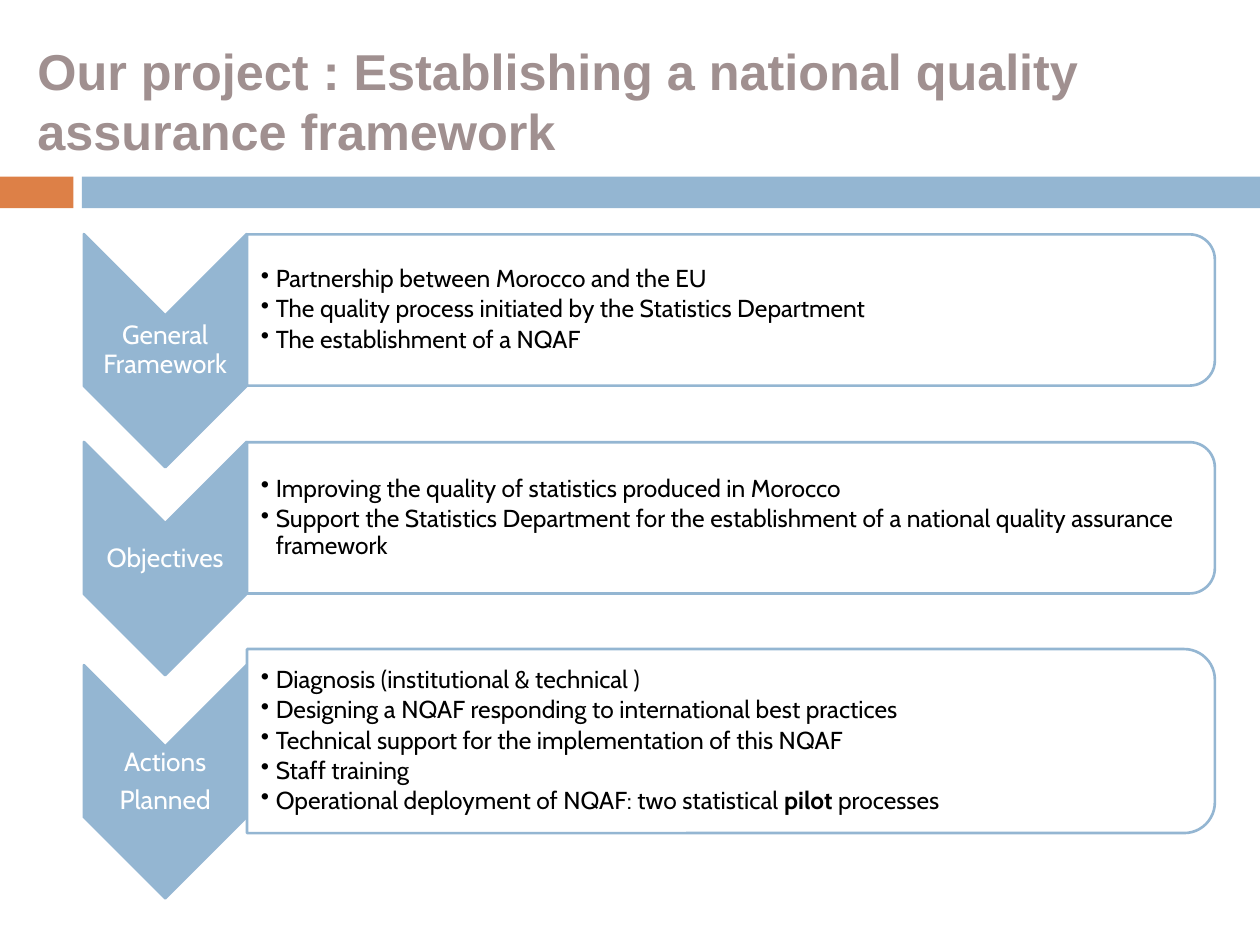
"""Build the slide on establishing a national quality assurance framework."""
from dataclasses import dataclass

from lxml import etree
from pptx import Presentation
from pptx.dml.color import RGBColor
from pptx.enum.shapes import MSO_SHAPE
from pptx.enum.text import MSO_ANCHOR, MSO_AUTO_SIZE, PP_ALIGN
from pptx.oxml.ns import qn
from pptx.util import Cm, Pt

RECTANGLE = MSO_SHAPE.RECTANGLE
CHEVRON = MSO_SHAPE.CHEVRON
ROUNDED_TOP = MSO_SHAPE.ROUND_2_SAME_RECTANGLE
MIDDLE = MSO_ANCHOR.MIDDLE
NO_AUTOFIT = MSO_AUTO_SIZE.NONE
LEFT, CENTER = PP_ALIGN.LEFT, PP_ALIGN.CENTER


@dataclass(frozen=True)
class Theme:
    blue: str = "94B6D2"
    orange: str = "DD8047"
    white: str = "FFFFFF"
    black: str = "000000"
    taupe: str = "A09090"
    title_font: str = "Arial"
    body_font: str = "Cabin"
    title_size: float = 28.8
    label_size: float = 15
    list_size: float = 14
    outline: float = 1.5


theme = Theme()


def write_text(frame, paragraphs, *, font, size, color, align=LEFT, bold=False,
               line_spacing=None, space_after=0, inset=None, bullet=False):
    """Fill a frame; each paragraph is a list of spans, and odd spans are bold."""
    frame.word_wrap = True
    frame.auto_size = NO_AUTOFIT
    frame.vertical_anchor = MIDDLE
    if inset is not None:
        frame.margin_left = Cm(inset)
        frame.margin_right = frame.margin_top = frame.margin_bottom = Cm(0.03)
    for index, spans in enumerate(paragraphs):
        para = frame.add_paragraph() if index else frame.paragraphs[0]
        para.alignment = align
        para.line_spacing = line_spacing
        para.space_after = Pt(space_after)
        if bullet:
            properties = para._p.get_or_add_pPr()
            properties.set("marL", str(Cm(0.3)))
            properties.set("indent", str(Cm(-0.3)))
            etree.SubElement(properties, qn("a:buChar"), char="•")
        for position, text in enumerate(spans):
            span = para.add_run()
            span.text = text
            span.font.name = font
            span.font.size = Pt(size)
            span.font.bold = bold or position % 2 == 1
            span.font.color.rgb = RGBColor.from_string(color)


def add_block(kind, left, top, width, height, fill, line=None, rotation=0):
    """Add a flat shape with an optional outline."""
    block = slide.shapes.add_shape(kind, Cm(left), Cm(top), Cm(width), Cm(height))
    block.shadow.inherit = False
    block.rotation = rotation
    block.fill.solid()
    block.fill.fore_color.rgb = RGBColor.from_string(fill)
    if line:
        block.line.color.rgb = RGBColor.from_string(line)
        block.line.width = Pt(theme.outline)
    else:
        block.line.fill.background()


deck = Presentation()
deck.slide_width, deck.slide_height = Cm(25.4), Cm(19.05)
slide = deck.slides.add_slide(deck.slide_layouts[5])

add_block(RECTANGLE, 0, 3.56, 1.48, 0.64, theme.orange)
add_block(RECTANGLE, 1.65, 3.56, 23.75, 0.64, theme.blue)

title = slide.shapes.title
title.left, title.top, title.width, title.height = Cm(0.5), Cm(0.74), Cm(23.8), Cm(2.57)
write_text(title.text_frame,
           [["Our project : Establishing a national quality assurance framework"]],
           font=theme.title_font, size=theme.title_size, color=theme.taupe, bold=True)

chevron_left, chevron_width, chevron_length = 1.69, 3.28, 4.7
label_height = 1.4
panel_left, panel_width = 4.98, 19.51
list_width, list_inset = 19.35, 0.28

sections = [
    (7.07, 6.25, 3.05, [["General Framework"]], [
        ["Partnership between Morocco and the EU"],
        ["The quality process initiated by the Statistics Department"],
        ["The establishment of a NQAF"],
    ]),
    (11.26, 10.44, 3.05, [["Objectives"]], [
        ["Improving the quality of statistics produced in Morocco"],
        ["Support the Statistics Department for the establishment of a national "
         "quality assurance framework"],
    ]),
    (15.76, 14.94, 3.71, [["Actions"], ["Planned"]], [
        ["Diagnosis (institutional & technical )"],
        ["Designing a NQAF responding to international best practices"],
        ["Technical support for the implementation of this NQAF"],
        ["Staff training"],
        ["Operational deployment of NQAF: two statistical ", "pilot ", "processes"],
    ]),
]

for chevron_middle, panel_middle, panel_height, label, points in sections:
    add_block(CHEVRON, chevron_left + (chevron_width - chevron_length) / 2,
              chevron_middle - chevron_width / 2, chevron_length, chevron_width,
              theme.blue, line=theme.blue, rotation=90)
    label_box = slide.shapes.add_textbox(
        Cm(chevron_left), Cm(chevron_middle - label_height / 2),
        Cm(chevron_width), Cm(label_height))
    write_text(label_box.text_frame, label, font=theme.body_font, size=theme.label_size,
               color=theme.white, align=CENTER, line_spacing=0.9, space_after=5.25,
               inset=0.03)

    add_block(ROUNDED_TOP, panel_left + (panel_width - panel_height) / 2,
              panel_middle - panel_width / 2, panel_height, panel_width,
              theme.white, line=theme.blue, rotation=90)
    list_height = panel_height * 0.9
    list_box = slide.shapes.add_textbox(
        Cm(panel_left), Cm(panel_middle - list_height / 2), Cm(list_width), Cm(list_height))
    write_text(list_box.text_frame, points, font=theme.body_font, size=theme.list_size,
               color=theme.black, line_spacing=0.9, space_after=2.1,
               inset=list_inset, bullet=True)

# The panel of each section is drawn over the edge of its chevron.
deck.save("out.pptx")
